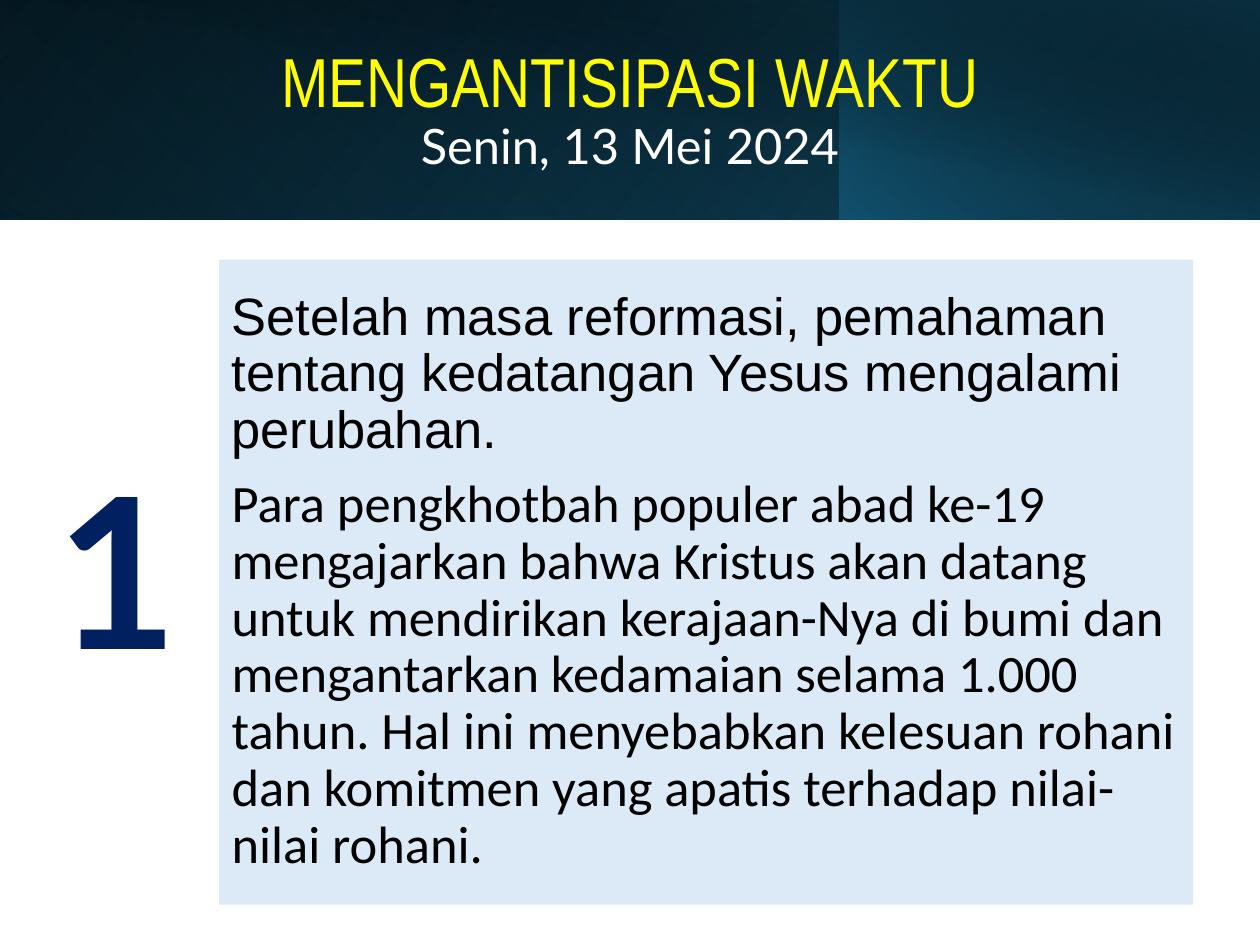
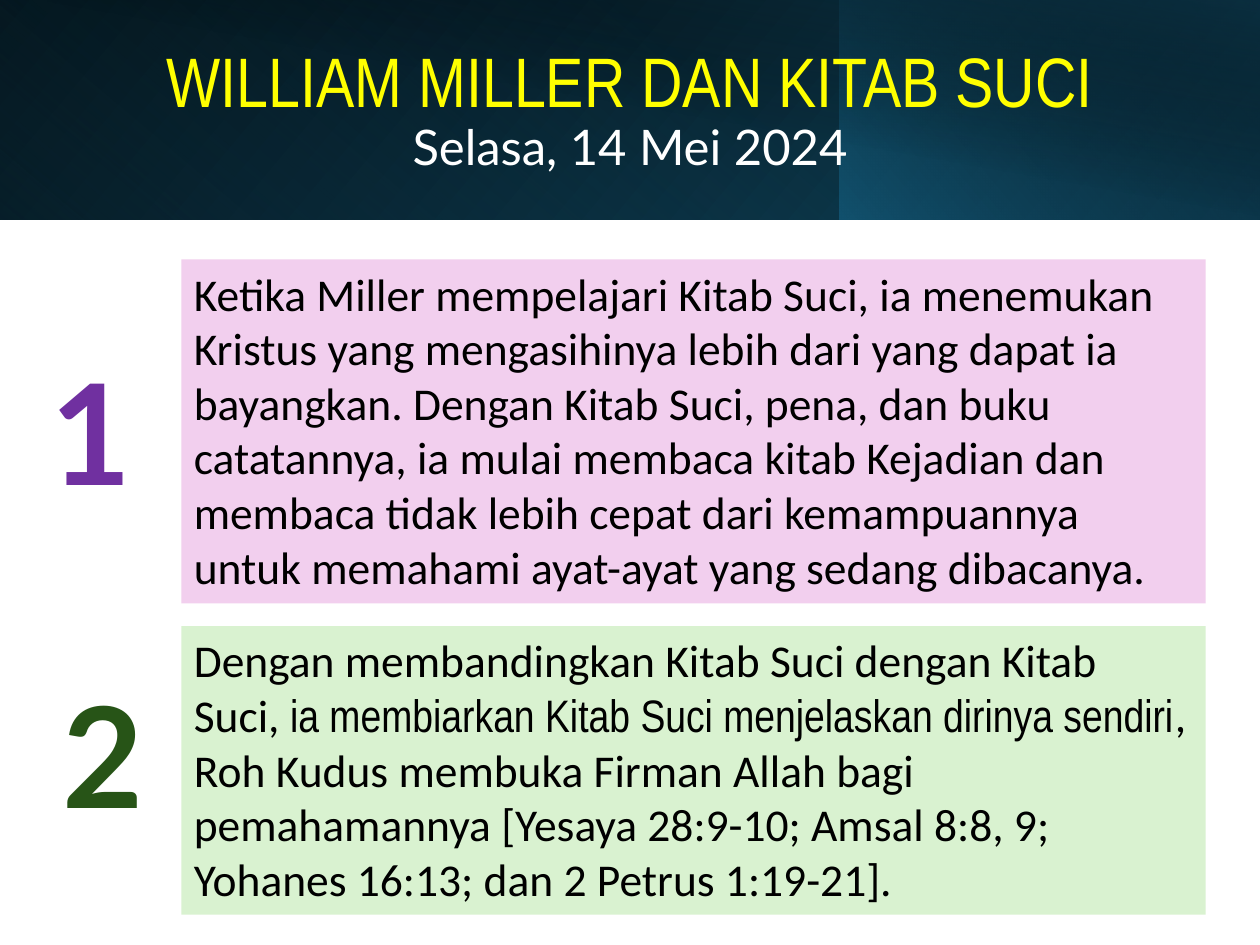
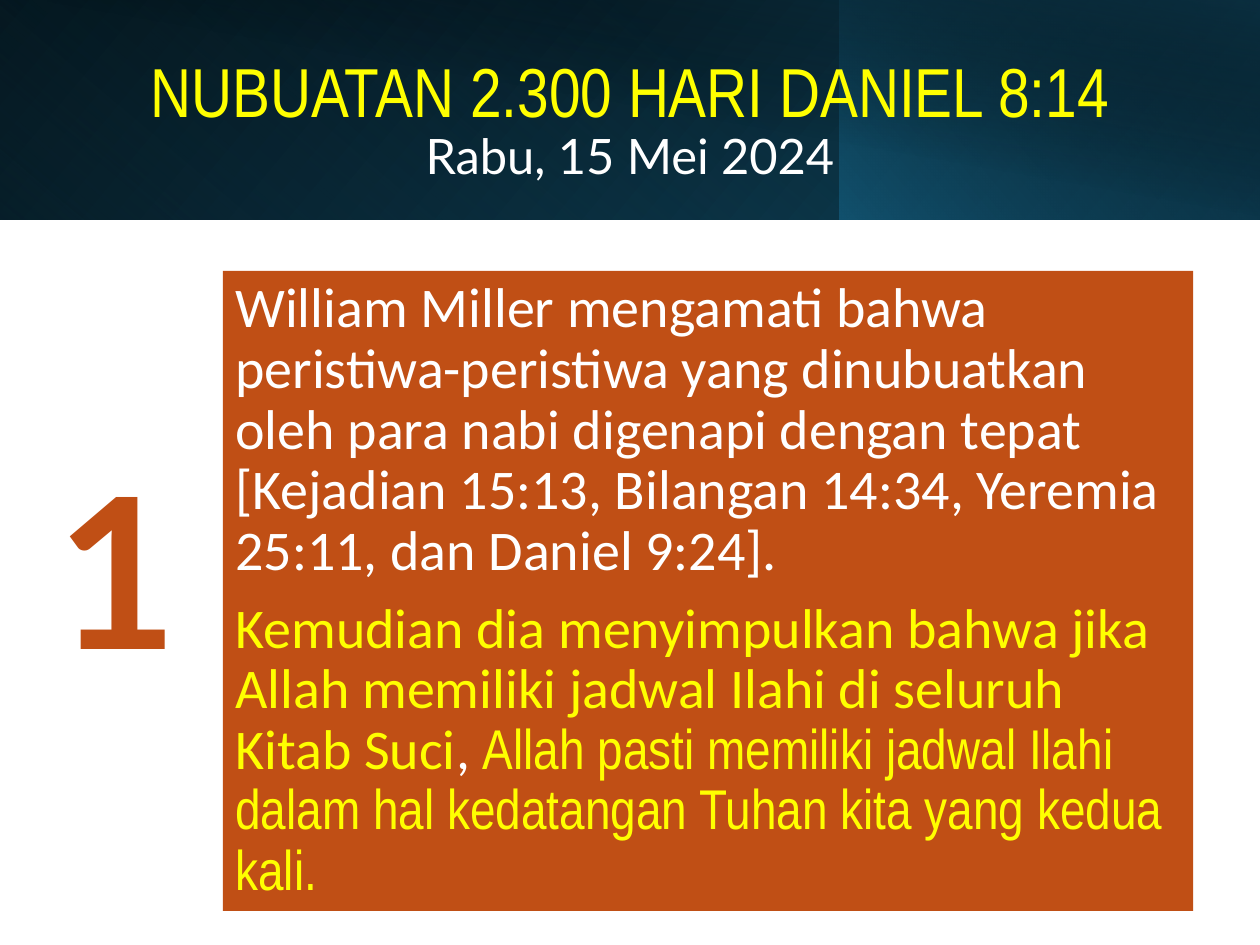
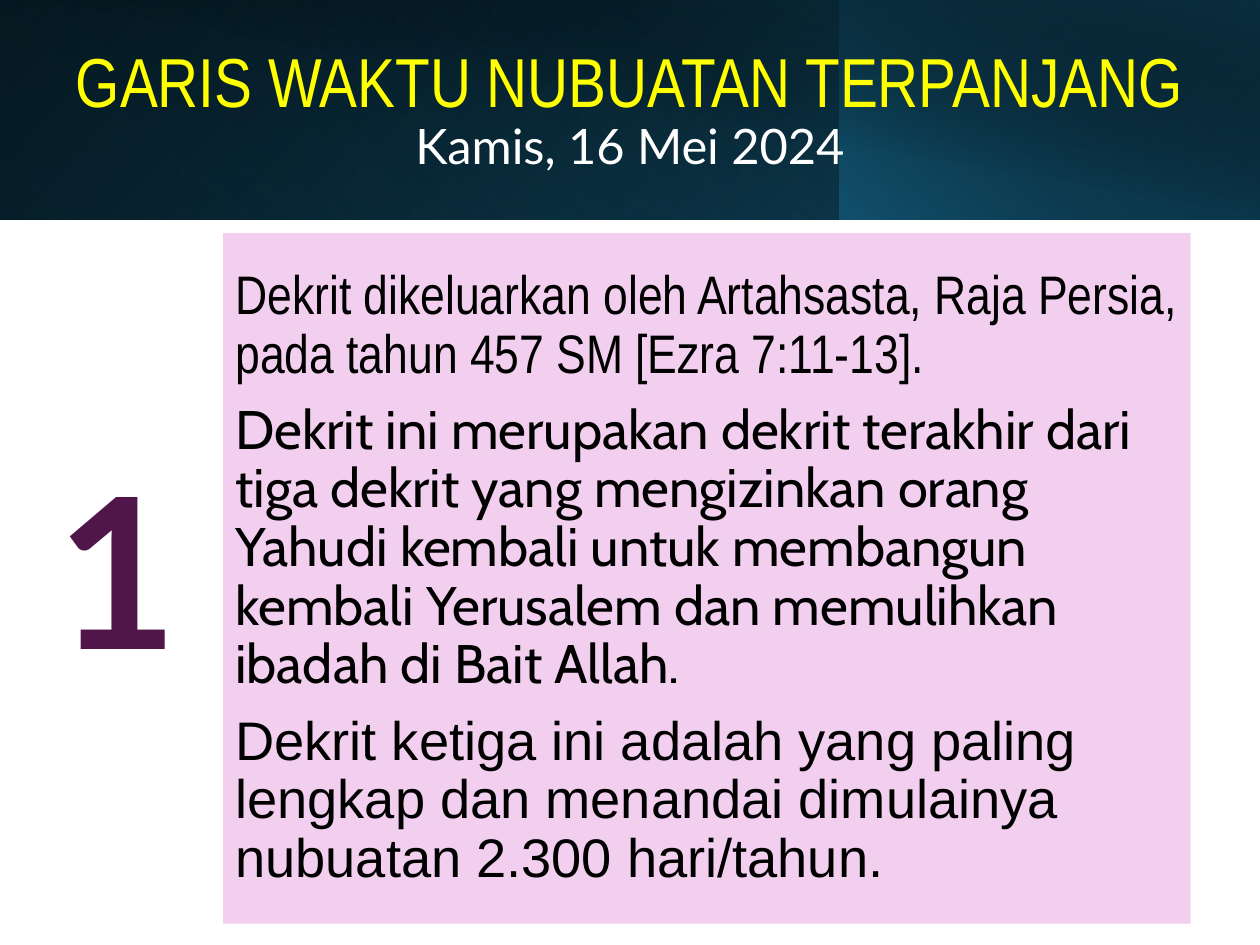
from lxml import etree
from pptx import Presentation
from pptx.dml.color import RGBColor
from pptx.enum.shapes import MSO_SHAPE
from pptx.enum.text import MSO_ANCHOR, PP_ALIGN
from pptx.oxml.ns import qn
from pptx.util import Inches, Pt

RECT = MSO_SHAPE.RECTANGLE
TOP, MID = MSO_ANCHOR.TOP, MSO_ANCHOR.MIDDLE
LEFT, MIDDLE = PP_ALIGN.LEFT, PP_ALIGN.CENTER

# Shared colours and fonts
BLACK, WHITE, YELLOW = "000000", "FFFFFF", "FFFF00"
PINK, RUST = "F2CFEE", "C04F15"
SANS, SLIM, BODY, HEAD, SOFT = "Arial", "Arial Narrow", "Calibri", "Lato", "Cabin"

# Header layers: box, turn, flip, angle, stops of (position, colour, opacity)
LAYERS = [
    ((0, 0, 10, 1.74), 0, True, 140, [(0, BLACK, 100), (100, "104862", 100)]),
    ((0, 0, 6.66, 1.74), 180, True, 230, [(20, "156082", 0), (100, "0B3041", 55)]),
    ((6.66, 0, 3.34, 1.74), 0, True, 220, [(0, "156082", 66), (100, BLACK, 30)]),
    ((0.38, 0, 9.62, 1.75), 0, False, 280, [(50, BLACK, 0), (99, "0B3041", 52)]),
]


def rgb(code):
    return RGBColor.from_string(code)


def node(parent, tag, **attrs):
    child = etree.SubElement(parent, qn(tag))
    for key, value in attrs.items():
        child.set(key, str(value))
    return child


def add_rect(slide, box):
    shape = slide.shapes.add_shape(RECT, *map(Inches, box))
    shape.shadow.inherit = False
    shape.line.fill.background()
    return shape


def add_layer(slide, box, turn, flip, angle, stops):
    shape = add_rect(slide, box)
    shape.rotation = turn
    props = shape.fill._xPr
    if flip:
        props.find(qn("a:xfrm")).set("flipH", "1")
    grad = etree.Element(qn("a:gradFill"), rotWithShape="1")
    stop_list = node(grad, "a:gsLst")
    for place, code, solid in stops:
        stop = node(stop_list, "a:gs", pos=place * 1000)
        tint = node(stop, "a:srgbClr", val=code)
        if solid < 100:
            node(tint, "a:alpha", val=solid * 1000)
    node(grad, "a:lin", ang=angle * 60000, scaled=0)
    props.find(qn("a:prstGeom")).addnext(grad)


def add_run(para, text, size, font, code, bold=False):
    run = para.add_run()
    run.text = text
    run.font.size, run.font.name, run.font.bold = Pt(size), font, bold
    run.font.color.rgb = rgb(code)
    return run


def set_frame(shape, anchor):
    frame = shape.text_frame
    frame.word_wrap, frame.vertical_anchor = True, anchor
    return frame


def add_text(slide, box, anchor=TOP):
    return set_frame(slide.shapes.add_textbox(*map(Inches, box)), anchor)


def add_head(slide, title, day, top=0.32, sizes=(39.6, 27.9)):
    for layer in LAYERS:
        add_layer(slide, *layer)
    para = add_text(slide, (0, top, 10, 1.13), MID).paragraphs[0]
    para.alignment, para.line_spacing = MIDDLE, 0.9
    add_run(para, title, sizes[0], SLIM, YELLOW)
    para.add_line_break()
    add_run(para, day, sizes[1], HEAD, WHITE)


def add_panel(slide, box, fill, size, paras, body=True):
    """Each paragraph is a list of (text, font, colour) runs."""
    shape = add_rect(slide, box)
    shape.fill.solid()
    shape.fill.fore_color.rgb = rgb(fill)
    frame = set_frame(shape, MID if body else TOP)
    for i, runs in enumerate(paras):
        para = frame.add_paragraph() if i else frame.paragraphs[0]
        para.alignment = LEFT
        if body:
            para.line_spacing, para.space_before = 0.9, Pt(10)
        for text, font, code in runs:
            add_run(para, text, size, font, code)


def add_digit(slide, text, code, box=(0.35, 3.44, 0.88, 2.12), size=120):
    para = add_text(slide, box).paragraphs[0]
    para.alignment = MIDDLE
    run = add_run(para, text, size, HEAD, code, True)
    edge = etree.Element(qn("a:ln"), w=str(Pt(1.06)))
    node(node(edge, "a:solidFill"), "a:srgbClr", val=WHITE)
    run.font._rPr.insert(0, edge)


def monday(slide):
    add_head(slide, "MENGANTISIPASI WAKTU", "Senin, 13 Mei 2024")
    add_panel(slide, (1.74, 2.06, 7.73, 5.12), "DCEAF7", 30, [
        [("Setelah masa reformasi, pemahaman tentang kedatangan Yesus "
          "mengalami perubahan.", SANS, BLACK)],
        [("Para pengkhotbah populer abad ke-19 mengajarkan bahwa Kristus akan "
          "datang untuk mendirikan kerajaan-Nya di bumi dan mengantarkan "
          "kedamaian selama 1.000 tahun. Hal ini menyebabkan kelesuan rohani "
          "dan komitmen yang apatis terhadap nilai-nilai rohani.", BODY, BLACK)],
    ])
    add_digit(slide, "1", "002060")


def tuesday(slide):
    add_head(slide, "WILLIAM MILLER DAN KITAB SUCI", "Selasa, 14 Mei 2024",
             sizes=(40, 28))
    add_panel(slide, (1.44, 2.06, 8.13, 2.73), PINK, 26, [
        [("Ketika Miller mempelajari Kitab Suci, ia menemukan Kristus yang "
          "mengasihinya lebih dari yang dapat ia bayangkan. Dengan Kitab Suci, "
          "pena, dan buku catatannya, ia mulai membaca kitab Kejadian dan "
          "membaca tidak lebih cepat dari kemampuannya untuk memahami "
          "ayat-ayat yang sedang dibacanya.", BODY, BLACK)],
    ], body=False)
    add_panel(slide, (1.44, 4.97, 8.13, 2.29), "D9F2D0", 26, [
        [("Dengan membandingkan Kitab Suci dengan Kitab Suci, ", BODY, BLACK),
         ("ia membiarkan Kitab Suci menjelaskan dirinya sendiri", SLIM, BLACK),
         (", Roh Kudus membuka Firman Allah bagi pemahamannya [Yesaya 28:9-10; "
          "Amsal 8:8, 9; Yohanes 16:13; dan 2 Petrus 1:19-21].", BODY, BLACK)],
    ], body=False)
    add_digit(slide, "1", "7030A0", (0.28, 2.69, 0.88, 1.45), 80)
    add_digit(slide, "2", "275417", (0.38, 5.26, 0.88, 1.45), 80)


def wednesday(slide):
    add_head(slide, "NUBUATAN 2.300 HARI DANIEL 8:14", "Rabu, 15 Mei 2024", 0.4)
    add_panel(slide, (1.77, 2.15, 7.7, 5.08), RUST, 32, [
        [("William Miller mengamati bahwa peristiwa-peristiwa yang dinubuatkan "
          "oleh para nabi digenapi dengan tepat [Kejadian 15:13, Bilangan "
          "14:34, Yeremia 25:11, dan Daniel 9:24].", BODY, WHITE)],
        [("Kemudian dia menyimpulkan bahwa jika Allah memiliki jadwal Ilahi di "
          "seluruh Kitab Suci", BODY, YELLOW),
         (", ", BODY, WHITE),
         ("Allah pasti memiliki jadwal Ilahi dalam hal kedatangan Tuhan kita "
          "yang kedua kali.", SLIM, YELLOW)],
    ])
    add_digit(slide, "1", RUST)


def thursday(slide):
    add_head(slide, "GARIS WAKTU NUBUATAN TERPANJANG", "Kamis, 16 Mei 2024")
    add_panel(slide, (1.77, 1.85, 7.68, 5.48), PINK, 31, [
        [("Dekrit dikeluarkan oleh Artahsasta, Raja Persia, pada tahun 457 SM "
          "[Ezra 7:11-13].", SLIM, BLACK)],
        [("Dekrit ini merupakan dekrit terakhir dari tiga dekrit yang "
          "mengizinkan orang Yahudi kembali untuk membangun kembali Yerusalem "
          "dan memulihkan ibadah di Bait Allah.", SOFT, BLACK)],
        [("Dekrit ketiga ini adalah yang paling lengkap dan menandai "
          "dimulainya nubuatan 2.300 hari/tahun.", SANS, BLACK)],
    ])
    add_digit(slide, "1", "501649")


def main():
    deck = Presentation()
    deck.slide_width, deck.slide_height = Inches(10), Inches(7.5)
    blank = deck.slide_layouts[6]
    for build in (monday, tuesday, wednesday, thursday):
        build(deck.slides.add_slide(blank))
    deck.save("out.pptx")


if __name__ == "__main__":
    main()
